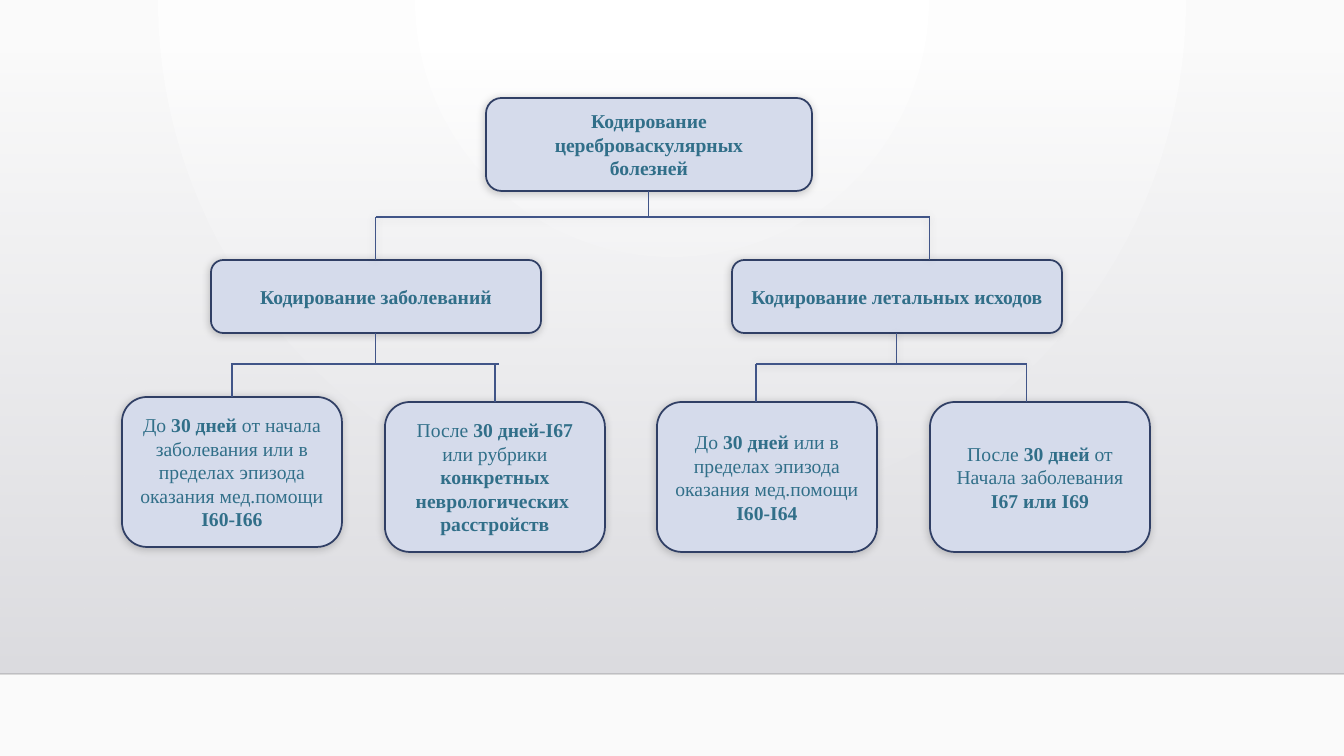
from dataclasses import dataclass

from lxml.etree import SubElement
from pptx import Presentation
from pptx.dml.color import RGBColor
from pptx.enum.shapes import MSO_CONNECTOR, MSO_SHAPE
from pptx.enum.text import MSO_ANCHOR, PP_ALIGN
from pptx.oxml.ns import qn
from pptx.util import Pt

# Content: text between asterisks is bold.
ROOT = ["*Кодирование цереброваскулярных*", "*болезней*"]
DISEASES = ["*Кодирование заболеваний*"]
DEATHS = ["*Кодирование летальных исходов*"]
LEAVES = [
    ["До *30 дней *от начала", "заболевания или в",
     "пределах эпизода оказания мед.помощи", "*I60-I66*"],
    ["После *30 дней-I67*", "или рубрики *конкретных неврологических *", "*расстройств*"],
    ["До *30 дней *или в", "пределах эпизода оказания мед.помощи", "*I60-I64*"],
    ["После *30 дней *от", "Начала заболевания", "*I67 или I69*"],
]
LEAF_CORNERS = [(122, 397), (385, 402), (657, 402), (930, 402)]


@dataclass(frozen=True)
class Theme:
    font: str = "Times New Roman"
    size: int = 14
    text: str = "316F89"
    box_fill: str = "D5DBEB"
    box_line: str = "303F65"
    connector: str = "415588"
    shadow: str = "000000"
    rule: str = "000001"
    backdrop: tuple = (("FFFFFF", 100), ("FAFAFA", 100))
    band: tuple = (("DCDCE0", 0), ("DEDEE2", 100))


THEME = Theme()
WIDTH, HEIGHT = 1344, 756
BAND_TOP, BAND_BOTTOM = 51, 674
LEVEL_TWO_TOP = 260


def px(length):
    return round(length * 914400 / 100.8)


def color(value):
    return RGBColor.from_string(value)


def add_alpha(color_node, percent):
    SubElement(color_node, qn("a:alpha"), val=str(percent * 1000))


def make_gradient(solid, stops):
    """Replace a solidFill node by a gradFill with the given stops."""
    gradient = solid.makeelement(qn("a:gradFill"), {"rotWithShape": "1"})
    stop_list = SubElement(gradient, qn("a:gsLst"))
    for position, (value, alpha) in zip((0, 100000), stops):
        stop = SubElement(stop_list, qn("a:gs"), pos=str(position))
        color_node = SubElement(stop, qn("a:srgbClr"), val=value)
        if alpha < 100:
            add_alpha(color_node, alpha)
    solid.getparent().replace(solid, gradient)
    return gradient


def set_effects(properties, shaded):
    """Give a shape or connector its soft shadow, or an empty effect list."""
    effects = SubElement(properties, qn("a:effectLst"))
    if shaded:
        shadow = SubElement(effects, qn("a:outerShdw"), blurRad=str(Pt(6)), dist=str(Pt(1)),
                            dir="8100000", algn="tl", rotWithShape="0")
        add_alpha(SubElement(shadow, qn("a:srgbClr"), val=THEME.shadow), 20)


def add_background(slide):
    slide.background.fill.solid()
    solid = slide.element.find(".//" + qn("p:bgPr")).find(qn("a:solidFill"))
    gradient = make_gradient(solid, THEME.backdrop)
    circle = SubElement(gradient, qn("a:path"), attrib={qn("a:path").split("}")[1]: "circle"})
    SubElement(circle, qn("a:fillToRect"), l="43000", r="43000", b="100000")

    band = slide.shapes.add_shape(MSO_SHAPE.RECTANGLE, 0, px(BAND_TOP), px(WIDTH),
                                  px(BAND_BOTTOM - BAND_TOP))
    band.shadow.inherit = False
    band.line.fill.background()
    band.fill.solid()
    gradient = make_gradient(band.element.spPr.find(qn("a:solidFill")), THEME.band)
    SubElement(gradient, qn("a:lin"), ang="5400000", scaled="0")

    rule = add_line(slide, (0, BAND_BOTTOM), (WIDTH, BAND_BOTTOM), THEME.rule, 1)
    add_alpha(rule.element.spPr.find(".//" + qn("a:srgbClr")), 20)


def add_line(slide, start, end, line_color=THEME.connector, width=0.75, shaded=False):
    line = slide.shapes.add_connector(MSO_CONNECTOR.STRAIGHT, *map(px, start + end))
    line.line.color.rgb = color(line_color)
    line.line.width = Pt(width)
    set_effects(line.element.spPr, shaded)
    return line


def add_box(slide, paragraphs, left, top, width, height):
    box = slide.shapes.add_shape(MSO_SHAPE.ROUNDED_RECTANGLE, *map(px, (left, top, width, height)))
    box.fill.solid()
    box.fill.fore_color.rgb = color(THEME.box_fill)
    box.line.color.rgb = color(THEME.box_line)
    box.line.width = Pt(1.25)
    set_effects(box.element.spPr, True)
    frame = box.text_frame
    frame.word_wrap = True
    frame.vertical_anchor = MSO_ANCHOR.MIDDLE
    for index, text in enumerate(paragraphs):
        para = frame.add_paragraph() if index else frame.paragraphs[0]
        para.alignment = PP_ALIGN.CENTER
        for part, words in enumerate(text.split("*")):
            if words:
                span = para.add_run()
                span.text = words
                span.font.name = THEME.font
                span.font.size = Pt(THEME.size)
                span.font.bold = part % 2 == 1
                span.font.color.rgb = color(THEME.text)
    return box


def is_middle(box, x):
    return abs(box.left + box.width // 2 - px(x)) <= px(1)


def add_branches(slide, parent, stem_x, bus_y, bus_ends, drops, shaded=()):
    """Draw stem, bus and drops; drops pairs each x with the box below it."""
    parent_bottom = round((parent.top + parent.height) / px(1))
    stem = add_line(slide, (stem_x, parent_bottom), (stem_x, bus_y), shaded="stem" in shaded)
    stem.begin_connect(parent, 2)
    add_line(slide, (bus_ends[0], bus_y), (bus_ends[1], bus_y), shaded="bus" in shaded)
    for x, child in drops:
        drop = add_line(slide, (x, bus_y), (x, round(child.top / px(1))), shaded="drop" in shaded)
        if is_middle(child, x):
            drop.end_connect(child, 0)


def main():
    deck = Presentation()
    deck.slide_width, deck.slide_height = px(WIDTH), px(HEIGHT)
    slide = deck.slides.add_slide(deck.slide_layouts[6])
    add_background(slide)

    root = add_box(slide, ROOT, 486, 98, 326, 93)
    diseases, deaths = (add_box(slide, text, left, LEVEL_TWO_TOP, 330, 73)
                        for text, left in ((DISEASES, 211), (DEATHS, 732)))
    leaves = [add_box(slide, text, *corner, 220, 150)
              for text, corner in zip(LEAVES, LEAF_CORNERS)]

    add_branches(slide, root, 649, 217, (376, 930), [(376, diseases), (930, deaths)],
                 shaded=("bus", "drop"))
    add_branches(slide, diseases, 376, 364, (231, 499), zip((232, 495), leaves[:2]))
    add_branches(slide, deaths, 897, 364, (756, 1027), zip((756, 1027), leaves[2:]),
                 shaded=("stem", "bus"))
    deck.save("out.pptx")


if __name__ == "__main__":
    main()
